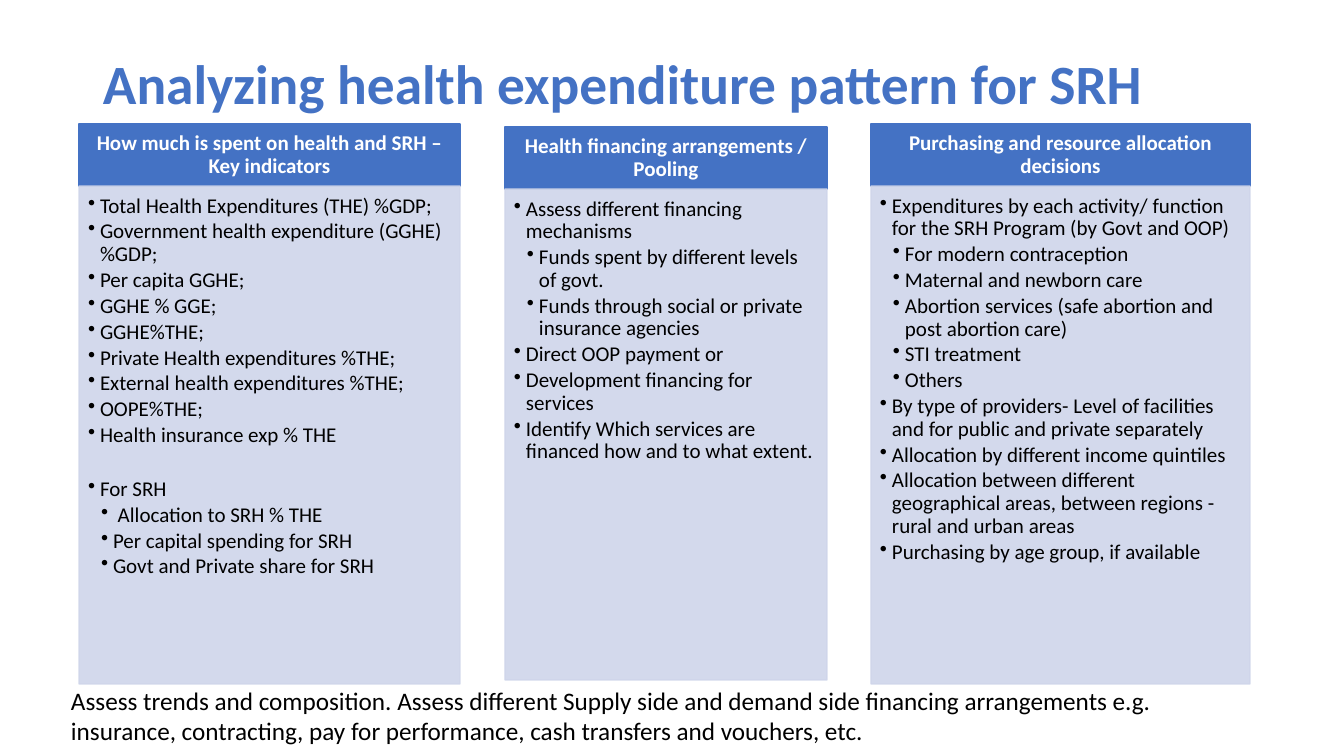
from lxml import etree
from pptx import Presentation
from pptx.dml.color import RGBColor
from pptx.enum.shapes import MSO_SHAPE
from pptx.enum.text import MSO_ANCHOR, PP_ALIGN
from pptx.oxml.ns import qn
from pptx.util import Pt

RECTANGLE = MSO_SHAPE.RECTANGLE
TOP, MIDDLE = MSO_ANCHOR.TOP, MSO_ANCHOR.MIDDLE
LEFT, CENTER = PP_ALIGN.LEFT, PP_ALIGN.CENTER

PIXELS_PER_INCH = 100.8
COLORS = {"blue": "4472C4", "pale": "CFD5EA", "white": "FFFFFF", "black": "000000"}
FONT = "Calibri"
HEADER_HEIGHT = 62
BULLET_INDENT = 12
GROUP_GAP = 20

# Each item is (level, text); a third value is the space before it in points
COLUMNS = [
    {
        "box": (79, 124, 381, 560),
        "heading": "How much is spent on health and SRH – Key indicators",
        "items": [
            (1, "Total Health Expenditures (THE) %GDP;"),
            (1, "Government health expenditure (GGHE) %GDP;"),
            (1, "Per capita GGHE;"),
            (1, "GGHE % GGE;"),
            (1, "GGHE%THE;"),
            (1, "Private Health expenditures %THE;"),
            (1, "External health expenditures %THE;"),
            (1, "OOPE%THE;"),
            (1, "Health insurance exp % THE"),
            (1, "For SRH", GROUP_GAP),
            (2, " Allocation to SRH % THE"),
            (2, "Per capital spending for SRH"),
            (2, "Govt and Private share for SRH"),
        ],
    },
    {
        "box": (505, 127, 322, 553),
        "heading": "Health financing arrangements / Pooling",
        "items": [
            (1, "Assess different financing mechanisms"),
            (2, "Funds spent by different levels of govt."),
            (2, "Funds through social or private insurance agencies"),
            (1, "Direct OOP payment or"),
            (1, "Development financing for services"),
            (1, "Identify Which services are financed how and to what extent."),
        ],
    },
    {
        "box": (871, 124, 379, 560),
        "heading": "Purchasing and resource allocation decisions",
        "items": [
            (1, "Expenditures by each activity/ function for the SRH Program (by Govt and OOP)"),
            (2, "For modern contraception"),
            (2, "Maternal and newborn care"),
            (2, "Abortion services (safe abortion and post abortion care)"),
            (2, "STI treatment"),
            (2, "Others"),
            (1, "By type of providers- Level of facilities and for public and private separately"),
            (1, "Allocation by different income quintiles"),
            (1, "Allocation between different geographical areas, between regions - "
                "rural and urban areas"),
            (1, "Purchasing by age group, if available"),
        ],
    },
]


def px(length):
    return round(length * 914400 / PIXELS_PER_INCH)


def set_attributes(target, values):
    for name, value in values.items():
        setattr(target, name, value)


def format_frame(shape, anchor, margins):
    sides = ("margin_left", "margin_top", "margin_right", "margin_bottom")
    set_attributes(shape.text_frame, {
        "word_wrap": True,
        "vertical_anchor": anchor,
        **{side: px(margin) for side, margin in zip(sides, margins)},
    })
    return shape.text_frame


def write(paragraph, text, size, color, bold=False, **layout):
    run = paragraph.add_run()
    run.text = text
    set_attributes(run.font, {"name": FONT, "size": Pt(size), "bold": bold})
    run.font.color.rgb = RGBColor.from_string(COLORS[color])
    set_attributes(paragraph, layout)


def add_bullet(paragraph, level):
    properties = paragraph._p.get_or_add_pPr()
    properties.set("marL", str(px(BULLET_INDENT * level + level - 1)))
    properties.set("indent", str(-px(BULLET_INDENT)))
    etree.SubElement(properties, qn("a:buChar")).set("char", "•")


def add_panel(slide, box, color, opacity=100):
    shape = slide.shapes.add_shape(RECTANGLE, *map(px, box))
    shape.shadow.inherit = False
    shape.fill.solid()
    shape.line.fill.solid()
    shape.line.width = Pt(1)
    for paint in (shape.fill, shape.line.fill):
        paint.fore_color.rgb = RGBColor.from_string(COLORS[color])
    if opacity < 100:
        for tint in shape._element.spPr.iter(qn("a:srgbClr")):
            etree.SubElement(tint, qn("a:alpha")).set("val", str(opacity * 1000))
    return shape


def add_text(slide, box, text, anchor, size, color, **options):
    shape = slide.shapes.add_textbox(*map(px, box))
    frame = format_frame(shape, anchor, (10, 5, 10, 5))
    write(frame.paragraphs[0], text, size, color, **options)


def add_column(slide, box, heading, items):
    left, top, width, height = box

    # Heading bar
    header = add_panel(slide, (left, top, width, HEADER_HEIGHT), "blue")
    frame = format_frame(header, MIDDLE, (12, 7, 12, 7))
    write(frame.paragraphs[0], heading, 15, "white", bold=True,
          alignment=CENTER, line_spacing=0.9)

    # Bulleted body
    body_box = (left, top + HEADER_HEIGHT, width, height - HEADER_HEIGHT)
    body = add_panel(slide, body_box, "pale", opacity=90)
    frame = format_frame(body, TOP, (9, 9, 12, 13))
    for index, (level, text, *gap) in enumerate(items):
        paragraph = frame.add_paragraph() if index else frame.paragraphs[0]
        write(paragraph, text, 15, "black", alignment=LEFT, level=level,
              line_spacing=0.9, space_before=Pt(sum(gap)), space_after=Pt(2.25))
        add_bullet(paragraph, level)


def build_slide(presentation):
    slide = presentation.slides.add_slide(presentation.slide_layouts[6])
    # Title
    add_text(slide, (93, 27, 1159, 120), "Analyzing health expenditure pattern for SRH",
             MIDDLE, 39.6, "blue", bold=True, line_spacing=0.9)
    # Three columns
    for column in COLUMNS:
        add_column(slide, **column)
    # Closing note
    add_text(slide, (61, 680, 1174, 72),
             "Assess trends and composition. Assess different Supply side and demand side "
             "financing arrangements e.g. insurance, contracting, pay for performance, "
             "cash transfers and vouchers, etc.", TOP, 18, "black")


def main():
    presentation = Presentation()
    set_attributes(presentation, {"slide_width": px(1344), "slide_height": px(756)})
    build_slide(presentation)
    presentation.save("out.pptx")


if __name__ == "__main__":
    main()
